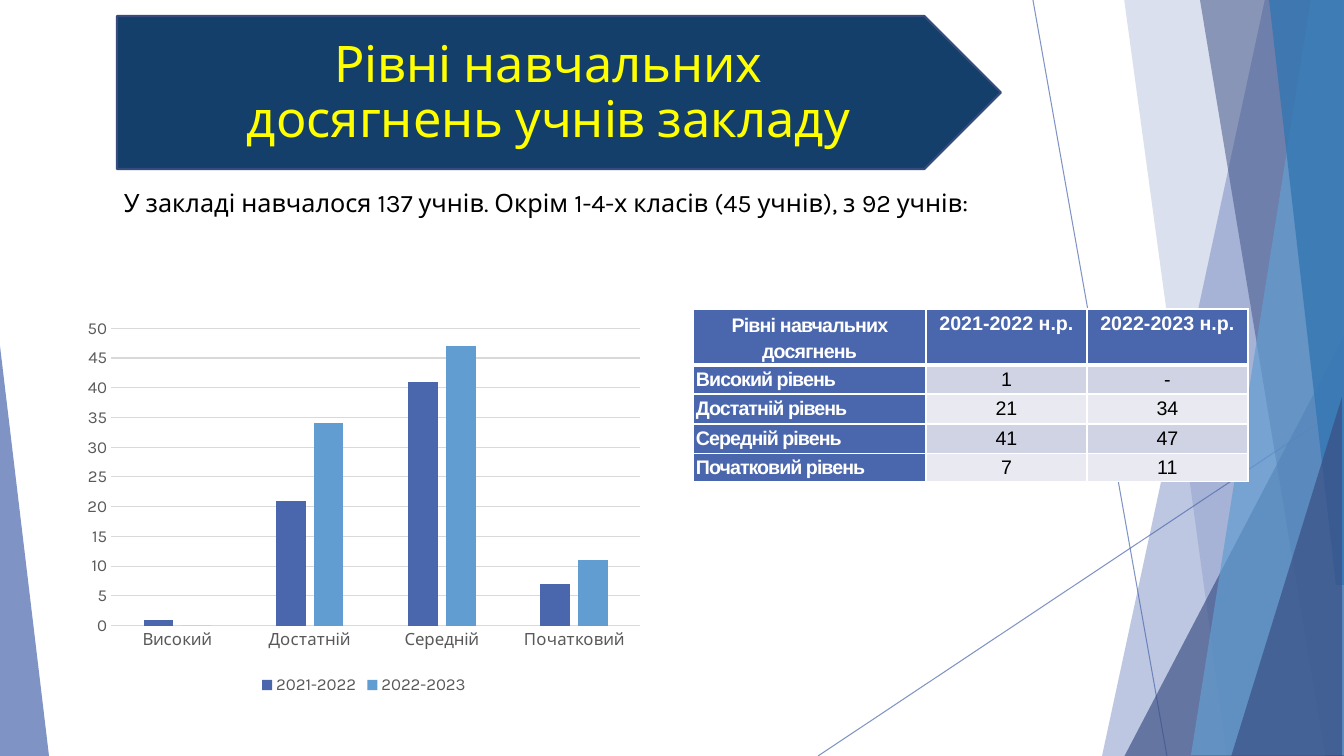
import pptx
import pptx.chart.data
import pptx.dml.color
import pptx.enum.chart
import pptx.enum.shapes
import pptx.enum.text
import pptx.oxml
import pptx.oxml.ns
import pptx.util

RGB = pptx.dml.color.RGBColor
SHAPE = pptx.enum.shapes.MSO_SHAPE
ALIGN = pptx.enum.text.PP_ALIGN
ANCHOR = pptx.enum.text.MSO_ANCHOR
Pt = pptx.util.Pt
qn = pptx.oxml.ns.qn

# Colours
BLUE, NAVY, SKY = RGB(0x4A, 0x66, 0xAC), RGB(0x38, 0x4C, 0x81), RGB(0x62, 0x9D, 0xD1)
OCEAN, BANNER, BANNER_EDGE = RGB(0x34, 0x77, 0xB2), RGB(0x14, 0x3F, 0x6A), RGB(0x37, 0x4B, 0x7F)
WHITE, BLACK, YELLOW = RGB(255, 255, 255), RGB(0, 0, 0), RGB(255, 255, 0)
GREY, GRID = RGB(0x59, 0x59, 0x59), RGB(0xD9, 0xD9, 0xD9)
BANDS = RGB(0xD0, 0xD3, 0xE3), RGB(0xE9, 0xEA, 0xF1)

# Content
TITLE = "Рівні навчальних досягнень учнів закладу"
INTRO = "У закладі навчалося 137 учнів. Окрім 1-4-х класів (45 учнів), з 92 учнів:"
LEVELS = ["Високий", "Достатній", "Середній", "Початковий"]
YEARS = [("2021-2022", [1, 21, 41, 7], BLUE), ("2022-2023", [0, 34, 47, 11], SKY)]
TABLE_HEAD = ["Рівні навчальних досягнень"] + [f"{year} н.р." for year, _, _ in YEARS]
TABLE_ROWS = [TABLE_HEAD] + [
    [f"{level} рівень"] + [str(values[i] or "-") for _, values, _ in YEARS]
    for i, level in enumerate(LEVELS)
]

# Places in px
SLIDE = (1344, 756)
RAYS = [(1033, 0, 1167, 756), (1344, 406, 818, 756)]
# Facets: corner points, or a box and an apex position for triangles
FACETS = [
    ([(1265, -1), (1343, -1), (1343, 756), (1102, 756)], BLUE, 36),
    ([(1124, -2), (1344, -2), (1344, 755), (1227, 755)], BLUE, 20),
    ((1124, 336, 220, 421, 1), NAVY, 66),
    ([(1200, 0), (1344, 0), (1344, 756), (1325, 756)], NAVY, 50),
    ([(1311, -1), (1344, -1), (1344, 755), (1191, 755)], SKY, 70),
    ([(1269, -1), (1344, -1), (1344, 585), (1336, 585)], OCEAN, 80),
    ((1231, 397, 111, 360, 1), NAVY, 66),
    ((0, 346, 49, 410, 0), BLUE, 70),
]
BANNER_BOX = (117, 16, 884, 153)
TITLE_BOX = (215, 27, 667, 133)
INTRO_BOX = (114, 182, 870, 40)
CHART_BOX = (70, 268, 588, 431)
PLOT = {"x": 0.07, "y": 0.14, "w": 0.9, "h": 0.69}
TABLE_AT = (693, 309)
COLUMNS = [233, 161, 161]
ROWS = [56, 29, 30, 30, 28]

SCALE = 914400 / 100.8


def px(*lengths):
    return [round(length * SCALE) for length in lengths]


def style(font, **values):
    color = values.pop("color")
    for name, value in values.items():
        setattr(font, name, value)
    font.color.rgb = color


def set_alpha(part, percent):
    for color in part._element.spPr.iter(qn("a:srgbClr")):
        alpha = color.makeelement(qn("a:alpha"), {"val": str(percent * 1000)})
        color.append(alpha)


def add_text(box, text, size, color, align, anchor, spacing):
    frame = slide.shapes.add_textbox(*px(*box)).text_frame
    frame.word_wrap = True
    frame.vertical_anchor = anchor
    paragraph = frame.paragraphs[0]
    paragraph.alignment, paragraph.line_spacing = align, spacing
    run = paragraph.add_run()
    run.text = text
    style(run.font, name="Karla", size=Pt(size), color=color)


def set_borders(cell, bottom):
    properties = cell._tc.get_or_add_tcPr()
    for i, (side, width) in enumerate({"L": 1, "R": 1, "T": 1, "B": bottom}.items()):
        properties.insert(i, pptx.oxml.parse_xml(
            f'<a:ln{side} {pptx.oxml.ns.nsdecls("a")} w="{Pt(width)}"><a:solidFill>'
            f'<a:srgbClr val="{WHITE}"/></a:solidFill></a:ln{side}>'))


deck = pptx.Presentation()
deck.slide_width, deck.slide_height = px(*SLIDE)
slide = deck.slides.add_slide(deck.slide_layouts[6])

# Background rays and facets
for ray_ends in RAYS:
    ray = slide.shapes.add_connector(pptx.enum.shapes.MSO_CONNECTOR.STRAIGHT, *px(*ray_ends))
    ray.line.color.rgb, ray.line.width = BLUE, Pt(0.75)
    set_alpha(ray, 70)
    ray._element.spPr.append(ray._element.makeelement(qn("a:effectLst"), {}))

for outline, color, opacity in FACETS:
    if isinstance(outline, tuple):
        *box, apex = outline
        facet = slide.shapes.add_shape(SHAPE.ISOSCELES_TRIANGLE, *px(*box))
        facet.adjustments[0] = apex
    else:
        builder = slide.shapes.build_freeform(*outline[0], scale=SCALE)
        builder.add_line_segments(outline[1:], close=True)
        facet = builder.convert_to_shape()
    facet.shadow.inherit = False
    facet.fill.solid()
    facet.fill.fore_color.rgb = color
    facet.line.fill.background()
    set_alpha(facet, opacity)

# Banner with title
banner = slide.shapes.add_shape(SHAPE.PENTAGON, *px(*BANNER_BOX))
banner.shadow.inherit = False
banner.fill.solid()
banner.fill.fore_color.rgb = BANNER
banner.line.color.rgb, banner.line.width = BANNER_EDGE, Pt(1.5)
add_text(TITLE_BOX, TITLE, 36, YELLOW, ALIGN.CENTER, ANCHOR.MIDDLE, 0.9)

# Table of levels
table = slide.shapes.add_table(
    len(ROWS), len(COLUMNS), *px(*TABLE_AT, sum(COLUMNS), sum(ROWS))).table
table.horz_banding = False
for column, width in zip(table.columns, px(*COLUMNS)):
    column.width = width
for row, height in zip(table.rows, px(*ROWS)):
    row.height = height
for r, texts in enumerate(TABLE_ROWS):
    for c, text in enumerate(texts):
        cell = table.cell(r, c)
        heading = r == 0 or c == 0
        side_margin = px(3)[0]
        for name, value in {
            "margin_left": side_margin, "margin_right": side_margin,
            "margin_top": 0, "margin_bottom": 0,
            "vertical_anchor": ANCHOR.MIDDLE if r == c == 0 else ANCHOR.TOP,
        }.items():
            setattr(cell, name, value)
        cell.fill.solid()
        cell.fill.fore_color.rgb = BLUE if heading else BANDS[(r - 1) % 2]
        set_borders(cell, 3 if r == 0 else 1)
        paragraph = cell.text_frame.paragraphs[0]
        paragraph.alignment = ALIGN.JUSTIFY if r and c == 0 else ALIGN.CENTER
        paragraph.line_spacing = 1.15
        run = paragraph.add_run()
        run.text = text
        style(run.font, name="Arial", size=Pt(14), bold=heading,
              color=WHITE if heading else BLACK)
        if c == 0:
            run._r.get_or_add_rPr().set("spc", "-70" if r else "-60")

# Introductory line
add_text(INTRO_BOX, INTRO, 18, BLACK, ALIGN.LEFT, ANCHOR.TOP, 1.0)

# Chart of levels by year
levels_data = pptx.chart.data.CategoryChartData()
levels_data.categories = LEVELS
for year, values, _ in YEARS:
    levels_data.add_series(year, values)
chart = slide.shapes.add_chart(
    pptx.enum.chart.XL_CHART_TYPE.COLUMN_CLUSTERED, *px(*CHART_BOX), levels_data).chart
chart.has_title = False
chart.has_legend = True
chart.legend.position = pptx.enum.chart.XL_LEGEND_POSITION.BOTTOM
chart.legend.include_in_layout = False
plot = chart.plots[0]
plot.gap_width, plot.overlap, plot.vary_by_categories = 219, -27, False
for series, (_, _, color) in zip(plot.series, YEARS):
    series.format.fill.solid()
    series.format.fill.fore_color.rgb = color

level_axis, count_axis = chart.category_axis, chart.value_axis
for axis in (level_axis, count_axis):
    axis.major_tick_mark = axis.minor_tick_mark = pptx.enum.chart.XL_TICK_MARK.NONE
for part in (chart, chart.legend, level_axis.tick_labels, count_axis.tick_labels):
    style(part.font, name="Karla", size=Pt(12), color=GREY)
count_axis.minimum_scale, count_axis.maximum_scale, count_axis.major_unit = 0, 50, 5
count_axis.format.line.fill.background()
for line in (level_axis.format.line, count_axis.major_gridlines.format.line):
    line.color.rgb, line.width = GRID, Pt(0.75)

# Fixed inner plot area
plot_area = chart._chartSpace.chart.plotArea
for layout in plot_area.findall(qn("c:layout")):
    plot_area.remove(layout)
sizes = "".join(f'<c:{key} val="{value}"/>' for key, value in PLOT.items())
plot_area.insert(0, pptx.oxml.parse_xml(
    f'<c:layout {pptx.oxml.ns.nsdecls("c")}><c:manualLayout><c:layoutTarget val="inner"/>'
    f'<c:xMode val="edge"/><c:yMode val="edge"/>{sizes}</c:manualLayout></c:layout>'))

deck.save("out.pptx")
